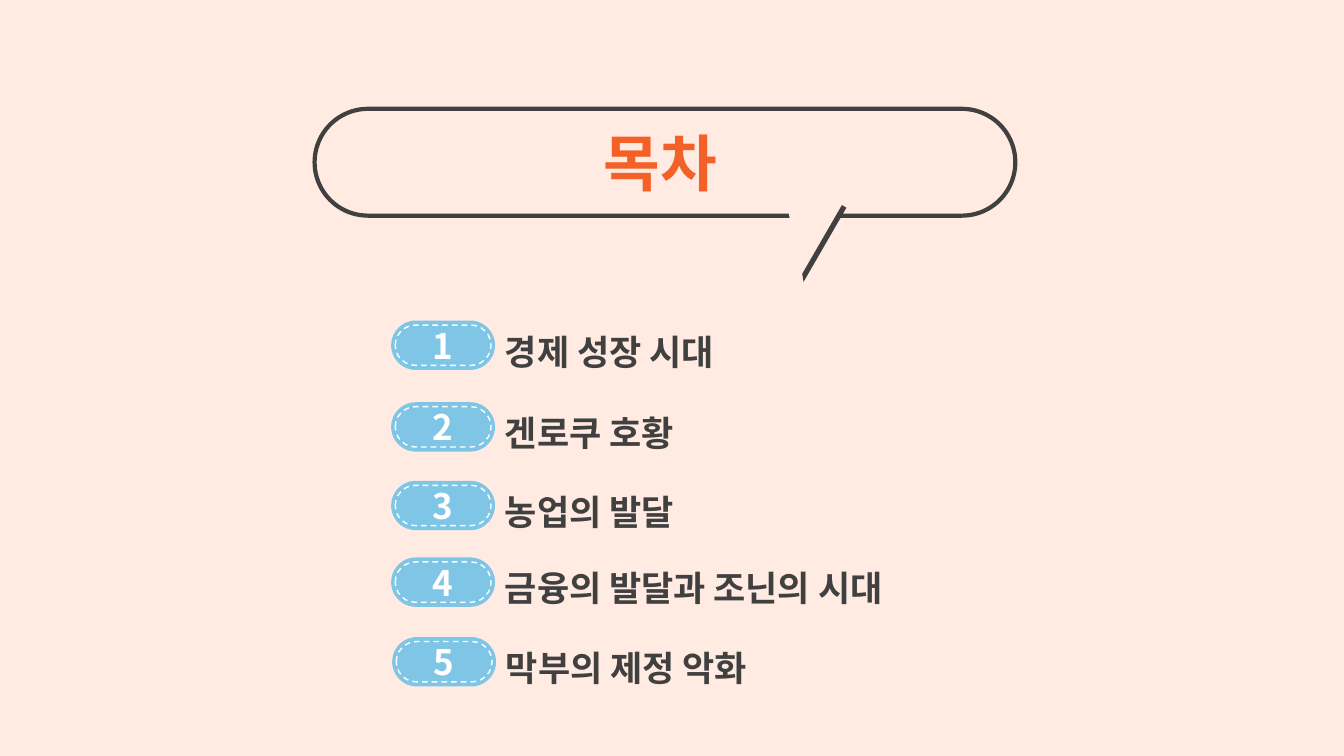
from lxml import etree
from pptx import Presentation
from pptx.dml.color import RGBColor
from pptx.enum.dml import MSO_LINE
from pptx.enum.shapes import MSO_SHAPE
from pptx.enum.text import MSO_ANCHOR, MSO_AUTO_SIZE, PP_ALIGN
from pptx.oxml import parse_xml
from pptx.oxml.ns import nsdecls, qn
from pptx.util import Inches, Pt

ROUND, TAIL = MSO_SHAPE.ROUNDED_RECTANGLE, MSO_SHAPE.RIGHT_TRIANGLE
TRI = MSO_SHAPE.ISOSCELES_TRIANGLE
LEFT, CENTER = PP_ALIGN.LEFT, PP_ALIGN.CENTER
MIDDLE, DASH = MSO_ANCHOR.MIDDLE, MSO_LINE.DASH
GROW = MSO_AUTO_SIZE.SHAPE_TO_FIT_TEXT

# Content: text, badge left, badge top, text width
TITLE = "목차"
ITEMS = [
    ("경제 성장 시대", 3.88, 3.18, 2.55),
    ("겐로쿠 호황", 3.88, 3.99, 2.08),
    ("농업의 발달", 3.88, 4.77, 2.08),
    ("금융의 발달과 조닌의 시대", 3.88, 5.53, 4.43),
    ("막부의 제정 악화", 3.89, 6.32, 2.9),
]
FONT = "Noto Sans CJK KR"
CREAM, DARK, ORANGE = "FFEBE2", "404040", "F46128"
BLUE, WHITE = "7FC6E6", "FFFFFF"


def color(part, code):
    part.rgb = RGBColor.from_string(code)


def add_box(slide, kind, box, adj, fill=None, line=None, width=1):
    shape = slide.shapes.add_shape(kind, *map(Inches, box))
    shape.shadow.inherit = False
    shape.adjustments[0] = adj
    if fill:
        shape.fill.solid()
        color(shape.fill.fore_color, fill)
    else:
        shape.fill.background()
    if line:
        color(shape.line.color, line)
        shape.line.width = Pt(width)
    else:
        shape.line.fill.background()
    return shape


def write(shape, text, size, code, align):
    para = shape.text_frame.paragraphs[0]
    para.text = text
    para.alignment = align
    run = para.runs[0]
    run.font.size, run.font.bold, run.font.name = Pt(size), True, FONT
    color(run.font.color, code)
    # East Asian typeface for Hangul
    latin = run.font._element.find(qn("a:latin"))
    east = etree.Element(qn("a:ea"), typeface=FONT)
    latin.addnext(east)


def add_label(slide, box, text, size, code, align):
    label = slide.shapes.add_textbox(*map(Inches, box))
    label.text_frame.word_wrap = False
    label.text_frame.auto_size = GROW
    write(label, text, size, code, align)


def add_bubble(slide):
    add_box(slide, ROUND, (3.12, 1.08, 6.95, 1.06), 0.5, CREAM, DARK, 3)
    tail = add_box(slide, TRI, (7.49, 1.79, 0.7, 0.85), 0, CREAM)
    tail.rotation = 210
    # Hard shadow draws the dark edge of the tail
    props = tail._element.spPr
    props.remove(props.find(qn("a:effectLst")))
    props.append(parse_xml(
        f'<a:effectLst {nsdecls("a")}><a:outerShdw blurRad="0" '
        f'dist="{Pt(4)}" dir="2700000" algn="tl" rotWithShape="0">'
        f'<a:srgbClr val="{DARK}"/></a:outerShdw></a:effectLst>'))
    add_label(slide, (5.83, 1.19, 1.44, 0.84), TITLE, 44, ORANGE, CENTER)


def add_item(slide, num, text, left, top, width):
    badge = add_box(slide, ROUND, (left, top, 1.03, 0.49), 0.5, BLUE)
    badge.text_frame.vertical_anchor = MIDDLE
    write(badge, str(num), 25, WHITE, CENTER)
    stitch = add_box(slide, ROUND, (left + 0.04, top + 0.045, 0.95, 0.4),
                     0.5, line=WHITE)
    stitch.line.dash_style = DASH
    add_label(slide, (left + 1.03, top + 0.045, width, 0.52),
              text, 25, DARK, LEFT)


def main():
    deck = Presentation()
    deck.slide_width, deck.slide_height = Inches(13.33), Inches(7.5)
    slide = deck.slides.add_slide(deck.slide_layouts[6])
    slide.background.fill.solid()
    color(slide.background.fill.fore_color, CREAM)
    add_bubble(slide)
    for num, item in enumerate(ITEMS, 1):
        add_item(slide, num, *item)
    deck.save("out.pptx")


if __name__ == "__main__":
    main()
